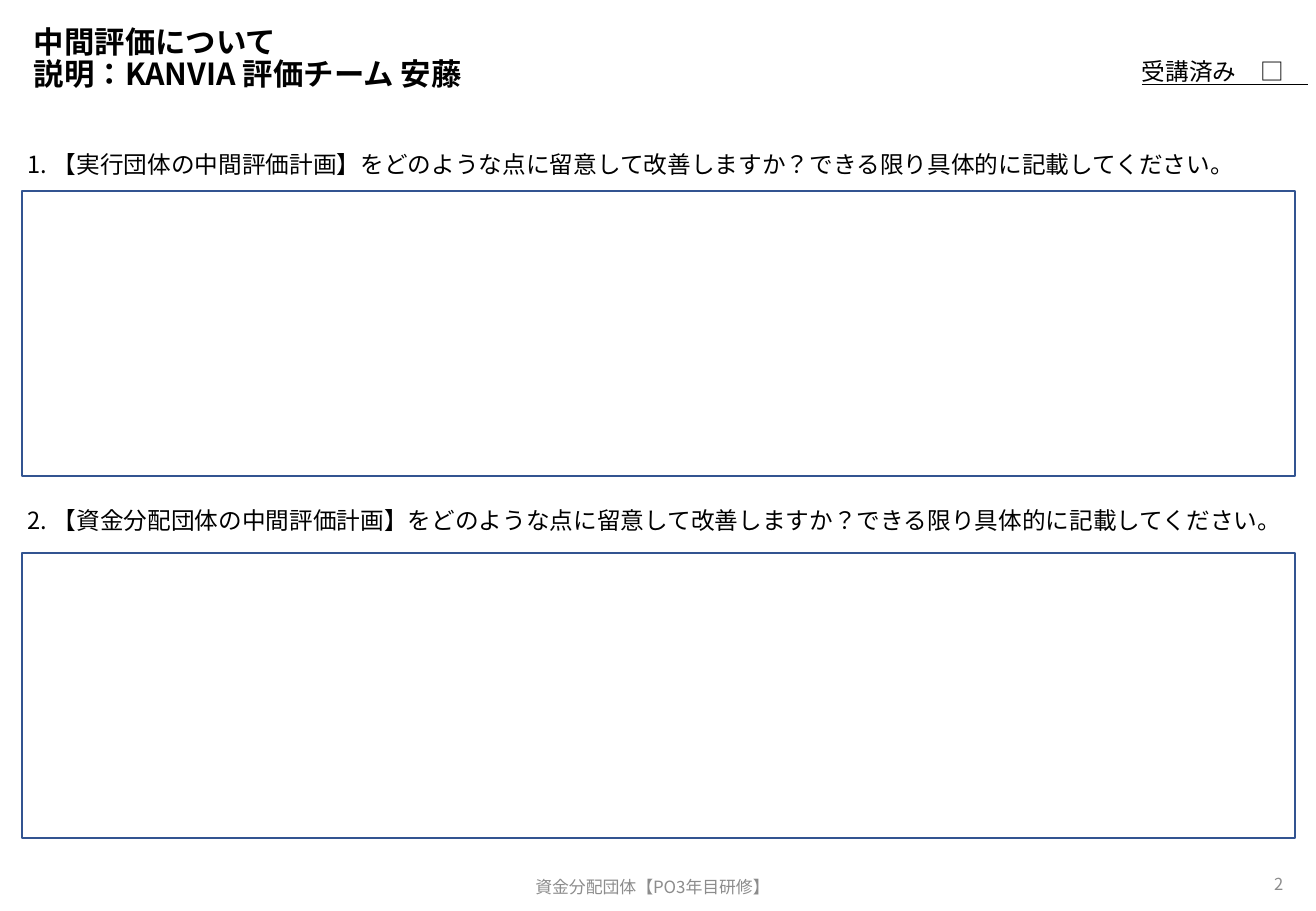
from lxml.etree import SubElement
from pptx import Presentation
from pptx.dml.color import RGBColor
from pptx.enum.shapes import MSO_SHAPE
from pptx.enum.text import MSO_ANCHOR as Anchor, PP_ALIGN as Align
from pptx.oxml.ns import qn
from pptx.util import Cm, Pt

FONT = "Noto Sans CJK JP"
COLORS = {"paper": "FFFFFF", "text": "000000", "muted": "8C8C8C", "frame": "325491"}

TITLE = "中間評価について\v説明：KANVIA 評価チーム 安藤"
ATTENDANCE = "受講済み\u3000□\u3000".replace("\u3000", "　")
FOOTER = "資金分配団体【PO3年目研修】"
PAGE_NUMBER = "2"
# question, top of question, top of answer box (cm)
QUESTIONS = [
    ("1. 【実行団体の中間評価計画】をどのような点に留意して改善しますか？できる限り具体的に記載してください。", 3.0, 3.99),
    ("2. 【資金分配団体の中間評価計画】をどのような点に留意して改善しますか？できる限り具体的に記載してください。", 10.46, 11.56),
]

QUESTION_LEFT, QUESTION_HEIGHT = 0.33, 0.86
ANSWER_LEFT, ANSWER_WIDTH, ANSWER_HEIGHT = 0.46, 26.62, 5.97


def color(name):
    return RGBColor.from_string(COLORS[name])


def add_text(slide, text, left, top, width, height, size, color_name="text",
             align=Align.LEFT, anchor=Anchor.TOP, bold=False, underline=False,
             line_spacing=None):
    """Add a one-paragraph text box; lengths are in cm."""
    box = slide.shapes.add_textbox(Cm(left), Cm(top), Cm(width), Cm(height))
    frame = box.text_frame
    frame.text = text
    frame.word_wrap = True
    frame.vertical_anchor = anchor
    paragraph = frame.paragraphs[0]
    paragraph.alignment = align
    paragraph.line_spacing = line_spacing
    for run in paragraph.runs:
        font = run.font
        font.name, font.size = FONT, Pt(size)
        font.bold, font.underline = bold, underline
        font.color.rgb = color(color_name)
        properties = run._r.get_or_add_rPr()
        properties.set("lang", "ja-JP")
        SubElement(properties, qn("a:ea")).set("typeface", FONT)


def add_answer_box(slide, top):
    box = slide.shapes.add_shape(MSO_SHAPE.RECTANGLE, Cm(ANSWER_LEFT), Cm(top),
                                 Cm(ANSWER_WIDTH), Cm(ANSWER_HEIGHT))
    box.shadow.inherit = False
    box.fill.solid()
    box.fill.fore_color.rgb = color("paper")
    box.line.color.rgb = color("frame")
    box.line.width = Pt(1)


def main():
    presentation = Presentation()
    presentation.slide_width, presentation.slide_height = Cm(27.51), Cm(19.05)
    slide = presentation.slides.add_slide(presentation.slide_layouts[6])

    add_text(slide, TITLE, 0.46, 0.08, 23.72, 2.34, 18, anchor=Anchor.MIDDLE,
             bold=True, line_spacing=0.9)
    add_text(slide, ATTENDANCE, 23.62, 1.07, 5.11, QUESTION_HEIGHT, 14, underline=True)

    for question, question_top, answer_top in QUESTIONS:
        add_text(slide, question, QUESTION_LEFT, question_top, ANSWER_WIDTH,
                 QUESTION_HEIGHT, 14)
        add_answer_box(slide, answer_top)

    add_text(slide, FOOTER, 8.99, 18.03, 9.3, 1.02, 10, "muted",
             Align.CENTER, Anchor.MIDDLE)
    add_text(slide, PAGE_NUMBER, 20.88, 17.98, 6.2, 1.02, 9.8, "muted",
             Align.RIGHT, Anchor.MIDDLE)
    presentation.save("out.pptx")


if __name__ == "__main__":
    main()
